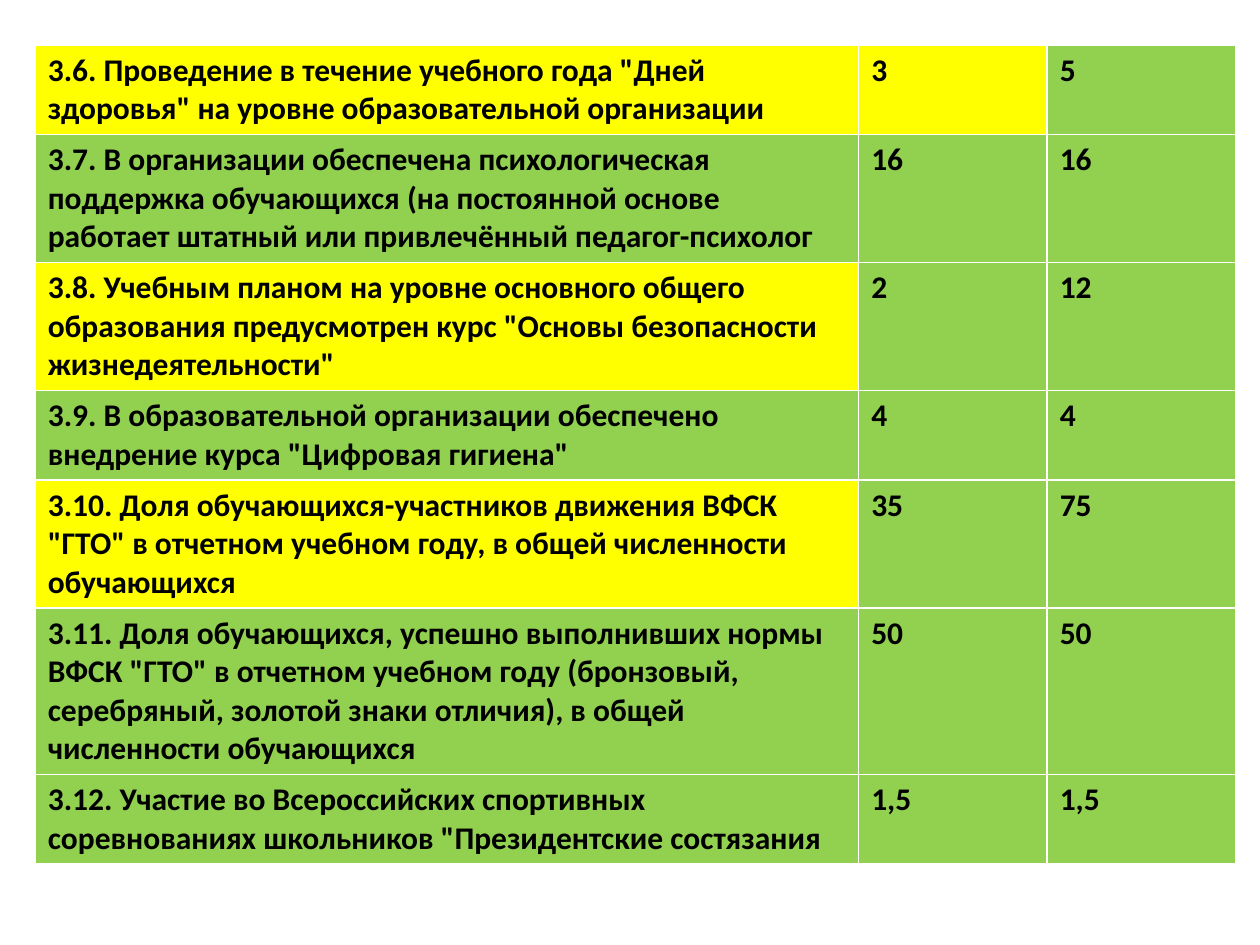
from dataclasses import dataclass

from pptx import Presentation
from pptx.dml.color import RGBColor
from pptx.table import _Cell
from pptx.util import Cm, Pt

COLORS = {"partial": "FFFF00", "full": "92D050", "ink": "000000"}
FONT = {"name": "Calibri", "size": Pt(18), "bold": True}
COLUMN_WIDTHS = (Cm(16.6), Cm(3.8), Cm(3.8))
ROW_HEIGHT = Cm(1.03)
TABLE_HEIGHT = Cm(16.26)


@dataclass(frozen=True)
class Criterion:
    wording: str
    score: str
    maximum: str
    statuses: tuple[str, str, str] = ("full", "full", "full")


CRITERIA = [
    Criterion('3.6. Проведение в течение учебного года "Дней здоровья" на уровне '
              'образовательной организации', "3", "5", ("partial", "partial", "full")),
    Criterion('3.7. В организации обеспечена психологическая поддержка обучающихся '
              '(на постоянной основе работает штатный или привлечённый педагог-психолог',
              "16", "16"),
    Criterion('3.8. Учебным планом на уровне основного общего образования предусмотрен '
              'курс "Основы безопасности жизнедеятельности"',
              "2", "12", ("partial", "full", "full")),
    Criterion('3.9. В образовательной организации обеспечено внедрение курса '
              '"Цифровая гигиена"', "4", "4"),
    Criterion('3.10. Доля обучающихся-участников движения ВФСК "ГТО" в отчетном учебном '
              'году, в общей численности обучающихся',
              "35", "75", ("partial", "full", "full")),
    Criterion('3.11. Доля обучающихся, успешно выполнивших нормы ВФСК "ГТО" в отчетном '
              'учебном году (бронзовый, серебряный, золотой знаки отличия), в общей '
              'численности обучающихся', "50", "50"),
    Criterion('3.12. Участие во Всероссийских спортивных соревнованиях школьников '
              '"Президентские состязания', "1,5", "1,5"),
]


def fill_cell(cell: _Cell, wording: str, status: str) -> None:
    cell.fill.solid()
    cell.fill.fore_color.rgb = RGBColor.from_string(COLORS[status])
    run = cell.text_frame.paragraphs[0].add_run()
    run.text = wording
    for attribute, value in FONT.items():
        setattr(run.font, attribute, value)
    run.font.color.rgb = RGBColor.from_string(COLORS["ink"])


def add_criteria_table(slide, criteria: list[Criterion]) -> None:
    """Add the table; the default style supplies its white rules."""
    frame = slide.shapes.add_table(len(criteria), len(COLUMN_WIDTHS), Cm(0.71), Cm(0.91),
                                   sum(COLUMN_WIDTHS), TABLE_HEIGHT)
    table = frame.table
    for column, width in zip(table.columns, COLUMN_WIDTHS):
        column.width = width
    for row, criterion in zip(table.rows, criteria):
        row.height = ROW_HEIGHT
        wordings = (criterion.wording, criterion.score, criterion.maximum)
        for cell, wording, status in zip(row.cells, wordings, criterion.statuses):
            fill_cell(cell, wording, status)
    frame.height = TABLE_HEIGHT


def main() -> None:
    presentation = Presentation()
    presentation.slide_width, presentation.slide_height = Cm(25.4), Cm(19.05)
    slide = presentation.slides.add_slide(presentation.slide_layouts.get_by_name("Blank"))
    add_criteria_table(slide, CRITERIA)
    presentation.save("out.pptx")


if __name__ == "__main__":
    main()
